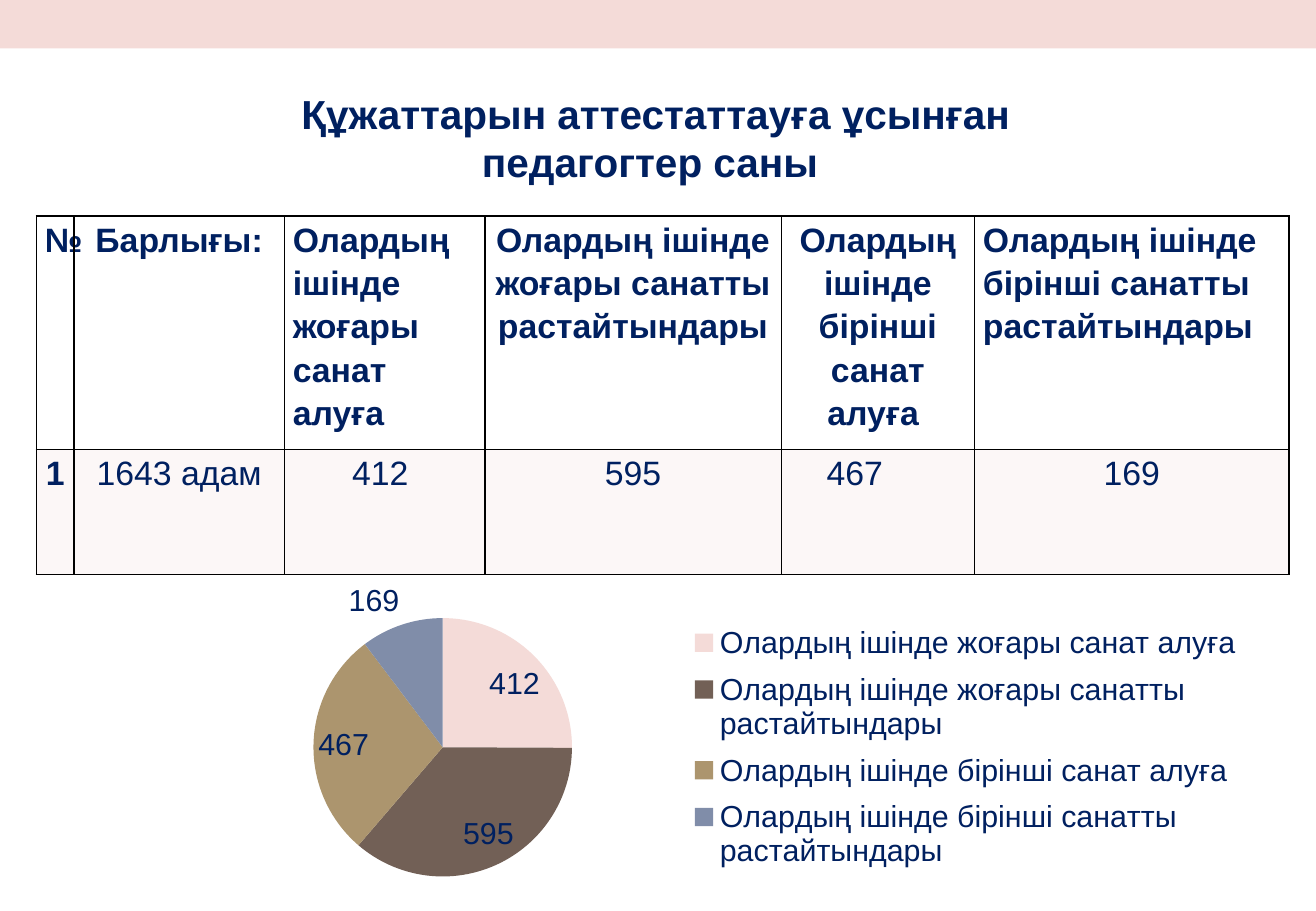
import pptx
import pptx.chart.data
import pptx.dml.color
import pptx.enum.chart
import pptx.enum.shapes
import pptx.enum.text
import pptx.oxml
import pptx.oxml.ns
import pptx.util

Inches = pptx.util.Inches
Pt = pptx.util.Pt
RGBColor = pptx.dml.color.RGBColor
ALIGN = pptx.enum.text.PP_ALIGN

FONT = "Arial"
NAVY = RGBColor(0x00, 0x20, 0x60)
BLACK = RGBColor(0x00, 0x00, 0x00)
ROSE = RGBColor(0xF4, 0xDB, 0xD8)
BROWN = RGBColor(0x72, 0x60, 0x56)
SAND = RGBColor(0xAC, 0x95, 0x6E)
STEEL = RGBColor(0x80, 0x8D, 0xA9)

TITLE = " Құжаттарын аттестаттауға ұсынған педагогтер саны"
GROUPS = [
    ("Олардың ішінде жоғары санат алуға ", 412, ROSE),
    ("Олардың ішінде жоғары санатты растайтындары", 595, BROWN),
    ("Олардың ішінде бірінші санат алуға ", 467, SAND),
    ("Олардың ішінде бірінші санатты растайтындары", 169, STEEL),
]
HEADER = ["№", "Барлығы:"] + [group[0] for group in GROUPS]
COUNTS = ["1", "1643 адам"] + [str(group[1]) for group in GROUPS]
COLUMN_WIDTHS = [0.31, 1.73, 1.65, 2.44, 1.59, 2.59]
ROW_HEIGHTS = [1.92, 1.03]
LEFT_ALIGNED_HEADERS = (2, 5)
COUNT_RIGHT_MARGINS = {2: 0.14, 4: 0.45}
PLOT_AREA = {"x": 0.057, "y": 0.164, "w": 0.539, "h": 0.744}
LEGEND_AREA = {"x": 0.52, "y": 0.15, "w": 0.46, "h": 0.77}


def style_font(font, size, bold=False):
    """Apply the slide's typeface and text colour."""
    font.name = FONT
    font.size = Pt(size)
    font.bold = bold
    font.color.rgb = NAVY


def set_text(frame, text, size, bold, align):
    """Write one formatted paragraph into a text frame."""
    frame.text = text
    paragraph = frame.paragraphs[0]
    paragraph.alignment = align
    style_font(paragraph.runs[0].font, size, bold)
    return paragraph


def add_band(slide, left, top, width, height):
    """Draw the plain band along the top edge."""
    band = slide.shapes.add_shape(
        pptx.enum.shapes.MSO_SHAPE.RECTANGLE, left, top, width, height)
    band.shadow.inherit = False
    band.fill.solid()
    band.fill.fore_color.rgb = ROSE
    band.line.fill.background()


def add_title(slide, left, top, width, height):
    """Place the centred slide title."""
    frame = slide.shapes.add_textbox(left, top, width, height).text_frame
    frame.word_wrap = True
    set_text(frame, TITLE, 24, True, ALIGN.CENTER)


def add_borders(cell):
    """Give a cell a thin black border on all four sides."""
    properties = cell._tc.get_or_add_tcPr()
    for position, side in enumerate(("lnL", "lnR", "lnT", "lnB")):
        properties.insert(position, pptx.oxml.parse_xml(
            f'<a:{side} {pptx.oxml.ns.nsdecls("a")} w="12700"><a:solidFill>'
            f'<a:srgbClr val="{BLACK}"/></a:solidFill></a:{side}>'))


def tint_cell(cell):
    """Fill a cell with a mostly transparent rose."""
    cell.fill.solid()
    cell.fill.fore_color.rgb = ROSE
    color = cell._tc.tcPr.find(".//" + pptx.oxml.ns.qn("a:srgbClr"))
    color.append(pptx.oxml.parse_xml(
        f'<a:alpha {pptx.oxml.ns.nsdecls("a")} val="20000"/>'))


def add_counts_table(slide, left, top, width, height):
    """Build the table of applicants by category."""
    table = slide.shapes.add_table(
        len(ROW_HEIGHTS), len(COLUMN_WIDTHS), left, top, width, height).table
    table.first_row = False
    table.horz_banding = False
    for column, column_width in zip(table.columns, COLUMN_WIDTHS):
        column.width = Inches(column_width)
    for row, row_height in zip(table.rows, ROW_HEIGHTS):
        row.height = Inches(row_height)
    for row_index, texts in enumerate((HEADER, COUNTS)):
        is_header = row_index == 0
        for column_index, text in enumerate(texts):
            cell = table.cell(row_index, column_index)
            cell.margin_left = cell.margin_right = Inches(0.07)
            cell.margin_top = cell.margin_bottom = 0
            at_left = is_header and column_index in LEFT_ALIGNED_HEADERS
            paragraph = set_text(
                cell.text_frame, text, 20, is_header or column_index == 0,
                ALIGN.LEFT if at_left else ALIGN.CENTER)
            paragraph.line_spacing = 1.15
            if is_header:
                cell.fill.background()
            else:
                tint_cell(cell)
            add_borders(cell)
    for column_index, margin in COUNT_RIGHT_MARGINS.items():
        table.cell(1, column_index).margin_right = Inches(margin)


def set_layout(part, position, area, target=""):
    """Fix a chart part's box as fractions of the chart."""
    for layout in part.findall(pptx.oxml.ns.qn("c:layout")):
        part.remove(layout)
    sizes = "".join(f'<c:{key} val="{value}"/>' for key, value in area.items())
    part.insert(position, pptx.oxml.parse_xml(
        f'<c:layout {pptx.oxml.ns.nsdecls("c")}><c:manualLayout>{target}'
        '<c:xMode val="edge"/><c:yMode val="edge"/>'
        f'{sizes}</c:manualLayout></c:layout>'))


def add_counts_pie(slide, left, top, width, height):
    """Build the pie of applicants with its legend."""
    counts = pptx.chart.data.CategoryChartData()
    counts.categories = [group[0] for group in GROUPS]
    counts.add_series("Series 1", [group[1] for group in GROUPS])
    chart = slide.shapes.add_chart(
        pptx.enum.chart.XL_CHART_TYPE.PIE, left, top, width, height, counts).chart
    chart.has_title = False
    style_font(chart.font, 18)
    chart.has_legend = True
    chart.legend.position = pptx.enum.chart.XL_LEGEND_POSITION.RIGHT
    chart.legend.include_in_layout = False
    style_font(chart.legend.font, 18)
    pie = chart.plots[0]
    pie.vary_by_categories = True
    for index, (_, _, color) in enumerate(GROUPS):
        point = pie.series[0].points[index]
        point.format.fill.solid()
        point.format.fill.fore_color.rgb = color
        point.format.line.fill.background()
        style_font(point.data_label.font, 18)
        point.data_label.position = pptx.enum.chart.XL_LABEL_POSITION.BEST_FIT
    chart_parts = chart.element.chart
    set_layout(chart_parts.plotArea, 0, PLOT_AREA, '<c:layoutTarget val="inner"/>')
    set_layout(chart_parts.legend, 1, LEGEND_AREA)


def main():
    """Assemble and save the slide."""
    deck = pptx.Presentation()
    deck.slide_width = Inches(10.83)
    deck.slide_height = Inches(7.5)
    slide = deck.slides.add_slide(deck.slide_layouts[6])
    add_band(slide, 0, 0, deck.slide_width, Inches(0.4))
    add_title(slide, Inches(1.95), Inches(0.68), Inches(6.8), Inches(0.91))
    add_counts_table(slide, Inches(0.3), Inches(1.78), Inches(10.31), Inches(2.95))
    add_counts_pie(slide, Inches(0.3), Inches(4.62), Inches(10.24), Inches(2.86))
    deck.save("out.pptx")


if __name__ == "__main__":
    main()
